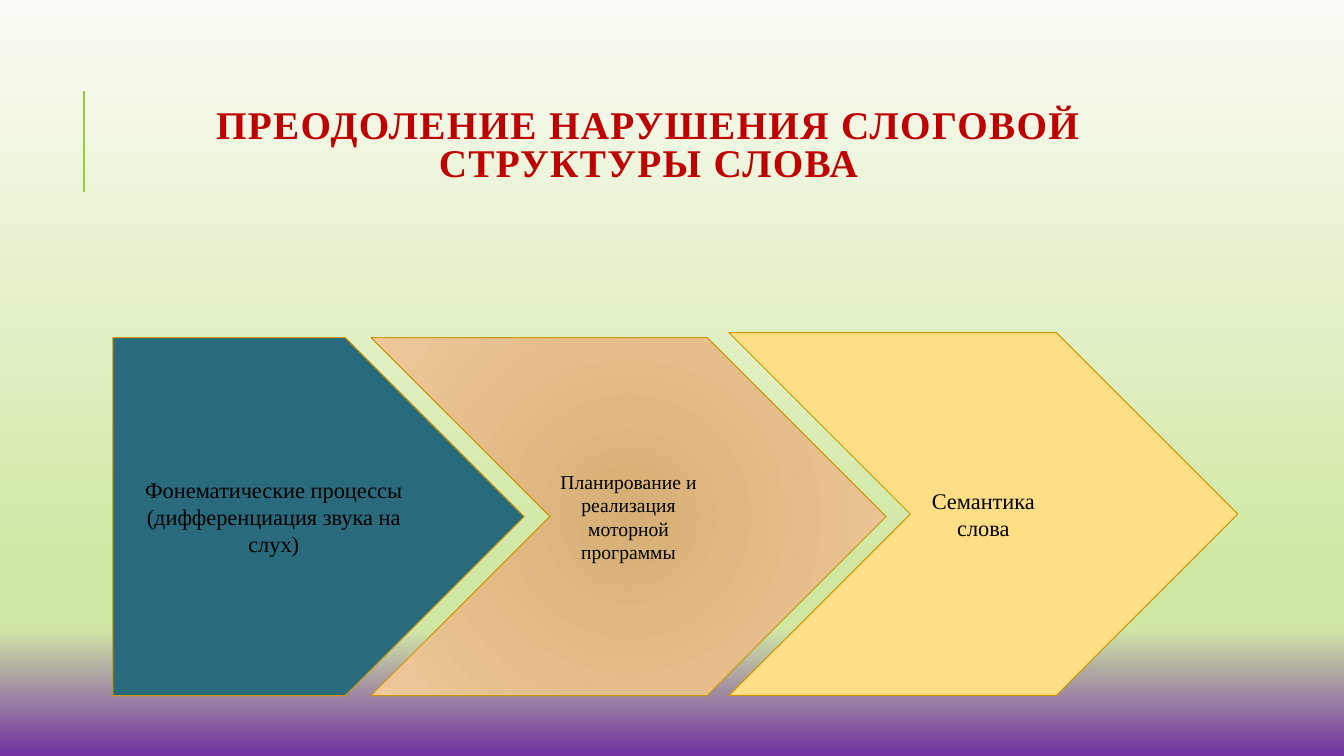
from dataclasses import dataclass

from lxml.etree import SubElement
from pptx import Presentation
from pptx.dml.color import RGBColor
from pptx.enum.shapes import MSO_CONNECTOR, MSO_SHAPE
from pptx.enum.text import MSO_ANCHOR, MSO_AUTO_SIZE, PP_ALIGN
from pptx.oxml.ns import qn
from pptx.util import Pt


@dataclass(frozen=True)
class Theme:
    font: str = "Times New Roman"
    title: str = "C00000"
    text: str = "000000"
    accent: str = "99CB38"
    outline: str = "CC9700"
    teal: str = "296A7D"
    yellow: str = "FFDF85"
    sky: tuple = ((0, "FAFCF5"), (74, "D1E8A5"), (83, "D1E8A5"), (100, "7030A0"))
    sand: tuple = ((0, "D6AF76"), (100, "F0C99B"))
    title_size: int = 28
    large: int = 16
    small: int = 14


def set_stops(element, stops, radial=False):
    """Give the gradient in element its colour stops and direction."""
    grad = element.find(".//" + qn("a:gradFill"))
    for child in list(grad):
        grad.remove(child)
    gs_list = SubElement(grad, qn("a:gsLst"))
    for pos, color in stops:
        gs = SubElement(gs_list, qn("a:gs"), pos=str(pos * 1000))
        SubElement(gs, qn("a:srgbClr"), val=color)
    if radial:
        circle = SubElement(grad, qn("a:path"), {"path": "circle"})
        SubElement(circle, qn("a:fillToRect"), {side: "50000" for side in "ltrb"})
    else:
        SubElement(grad, qn("a:lin"), ang="5400000", scaled="0")


def set_text(tf, text, size, color, bold=False):
    """Write one centred paragraph and return it."""
    tf.word_wrap = True
    tf.vertical_anchor = MSO_ANCHOR.MIDDLE
    p = tf.paragraphs[0]
    p.alignment = PP_ALIGN.CENTER
    p.add_run().text = text
    p.font.name = theme.font
    p.font.size = Pt(size)
    p.font.bold = bold
    p.font.color.rgb = RGBColor.from_string(color)
    return p


theme = Theme()
prs = Presentation()
prs.slide_width, prs.slide_height = Pt(960), Pt(540)
s = prs.slides.add_slide(prs.slide_layouts[5])

# Background
s.background.fill.gradient()
set_stops(s.background._cSld, theme.sky)

# Accent line beside the title
line = s.shapes.add_connector(MSO_CONNECTOR.STRAIGHT, Pt(60), Pt(136.8), Pt(60), Pt(64.8))
line.line.color.rgb = RGBColor.from_string(theme.accent)
line.line.width = Pt(1.5)
SubElement(line._element.spPr, qn("a:effectLst"))

# Title
title = s.shapes.title
title.left, title.top, title.width, title.height = Pt(80.6), Pt(46), Pt(765.4), Pt(118)
title.text_frame.auto_size = MSO_AUTO_SIZE.NONE
p = set_text(title.text_frame, "ПРЕОДОЛЕНИЕ НАРУШЕНИЯ СЛОГОВОЙ СТРУКТУРЫ СЛОВА",
             theme.title_size, theme.title, bold=True)
p.line_spacing = 0.8
p.runs[0].font._element.set("spc", "100")

# Stage arrows, all standing on one baseline
baseline = 496.8
stages = [
    (MSO_SHAPE.PENTAGON, 80.6, 293.8, 255.6, theme.teal, theme.large,
     "Фонематические процессы (дифференциация звука на слух)"),
    (MSO_SHAPE.CHEVRON, 265, 368, 255.6, theme.sand, theme.small,
     "Планирование и реализация моторной программы"),
    (MSO_SHAPE.CHEVRON, 520.6, 363.6, 259.2, theme.yellow, theme.large,
     "Семантика слова"),
]
for kind, left, width, height, fill, size, text in stages:
    sp = s.shapes.add_shape(kind, Pt(left), Pt(baseline - height), Pt(width), Pt(height))
    sp.shadow.inherit = False
    if isinstance(fill, tuple):
        sp.fill.gradient()
        set_stops(sp._element, fill, radial=True)
    else:
        sp.fill.solid()
        sp.fill.fore_color.rgb = RGBColor.from_string(fill)
    sp.line.color.rgb = RGBColor.from_string(theme.outline)
    sp.line.width = Pt(0.75)
    set_text(sp.text_frame, text, size, theme.text)

prs.save("out.pptx")
